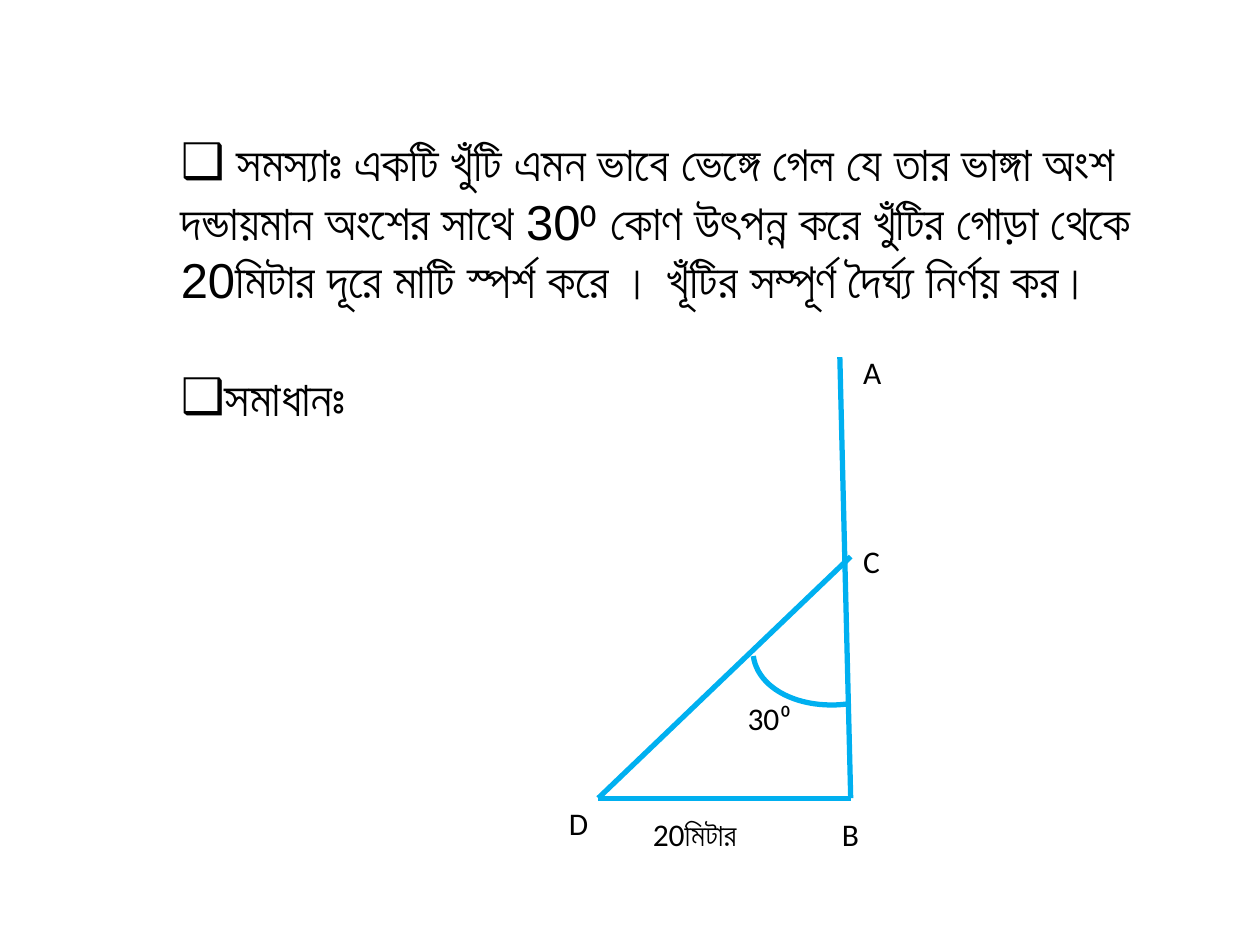
import pptx
import pptx.dml.color
import pptx.enum.shapes
import pptx.enum.text
import pptx.oxml.ns
import pptx.util
from dataclasses import dataclass
from lxml import etree

Cm = pptx.util.Cm
Pt = pptx.util.Pt
BLUE = pptx.dml.color.RGBColor(0x00, 0xB0, 0xF0)
BLACK = pptx.dml.color.RGBColor(0x00, 0x00, 0x00)


@dataclass
class Point:
    x: float
    y: float


@dataclass
class Label:
    text: str
    x: float
    y: float
    width: float = 1.69


TASK = [
    " সমস্যাঃ একটি খুঁটি এমন ভাবে ভেঙ্গে গেল যে তার ভাঙ্গা অংশ দন্ডায়মান অংশের সাথে 30⁰ "
    "কোণ উৎপন্ন করে খুঁটির গোড়া থেকে 20মিটার দূরে মাটি স্পর্শ করে । "
    "খূঁটির সম্পূর্ণ দৈর্ঘ্য নির্ণয় কর।",
    "সমাধানঃ",
]

# Corners of the broken pole: top, break, foot and touching point
A = Point(16.93, 7.2)
C = Point(17.15, 11.22)
B = Point(17.15, 16.09)
D = Point(12.06, 16.09)
SIDES = [(A, B), (C, D), (D, B)]

LABELS = [
    Label("A", 17.15, 6.99),
    Label("B", 16.72, 16.3),
    Label("C", 17.15, 10.8),
    Label("D", 11.22, 16.09, 2.12),
    Label("30⁰", 14.82, 13.97),
    Label("20মিটার", 12.91, 16.3, 4.23),
]


def style(para, size: float, face: str) -> None:
    for run in para.runs:
        run.font.size = Pt(size)
        run.font.name = face
        run.font.color.rgb = BLACK


def add_mark(para) -> None:
    """Give the paragraph a box bullet with no indent."""
    props = para._p.get_or_add_pPr()
    props.set("marL", "0")
    props.set("indent", "0")
    qn = pptx.oxml.ns.qn
    etree.SubElement(props, qn("a:buFont")).set("typeface", "Arial")
    etree.SubElement(props, qn("a:buChar")).set("char", "❑")


def add_list(slide, lines: list[str]) -> None:
    body = slide.placeholders[1]
    body.left, body.top = Cm(3.39), Cm(2.54)
    body.width, body.height = Cm(20.53), Cm(6.25)
    frame = body.text_frame
    frame.text = "\n".join(lines)
    frame.auto_size = pptx.enum.text.MSO_AUTO_SIZE.NONE
    for rank, para in enumerate(frame.paragraphs):
        para.space_before = Pt(33.5 * rank)
        add_mark(para)
        style(para, 28, "Arial")


def add_side(slide, start: Point, end: Point) -> None:
    side = slide.shapes.add_connector(
        pptx.enum.shapes.MSO_CONNECTOR.STRAIGHT,
        Cm(start.x), Cm(start.y), Cm(end.x), Cm(end.y))
    side.line.color.rgb = BLUE
    side.line.width = Pt(3)
    etree.SubElement(side._element.spPr, pptx.oxml.ns.qn("a:effectLst"))


def add_angle(slide) -> None:
    arc = slide.shapes.add_shape(
        pptx.enum.shapes.MSO_SHAPE.ARC, Cm(15.17), Cm(11.79), Cm(3.52), Cm(2.41))
    arc.rotation = 172.5
    arc.shadow.inherit = False
    arc.fill.background()
    arc.line.color.rgb = BLUE
    arc.line.width = Pt(3)


def add_label(slide, label: Label) -> None:
    box = slide.shapes.add_textbox(
        Cm(label.x), Cm(label.y), Cm(label.width), Cm(1.02))
    box.text_frame.word_wrap = True
    box.text_frame.text = label.text
    style(box.text_frame.paragraphs[0], 18, "Calibri")


def main() -> None:
    deck = pptx.Presentation()
    deck.slide_width, deck.slide_height = Cm(25.4), Cm(19.05)
    slide = deck.slides.add_slide(deck.slide_layouts[1])

    # The slide has no title
    title = slide.shapes.title._element
    title.getparent().remove(title)

    # Problem and solution
    add_list(slide, TASK)

    # Triangle with its angle and labels
    for start, end in SIDES:
        add_side(slide, start, end)
    add_angle(slide)
    for label in LABELS:
        add_label(slide, label)

    deck.save("out.pptx")


if __name__ == "__main__":
    main()
